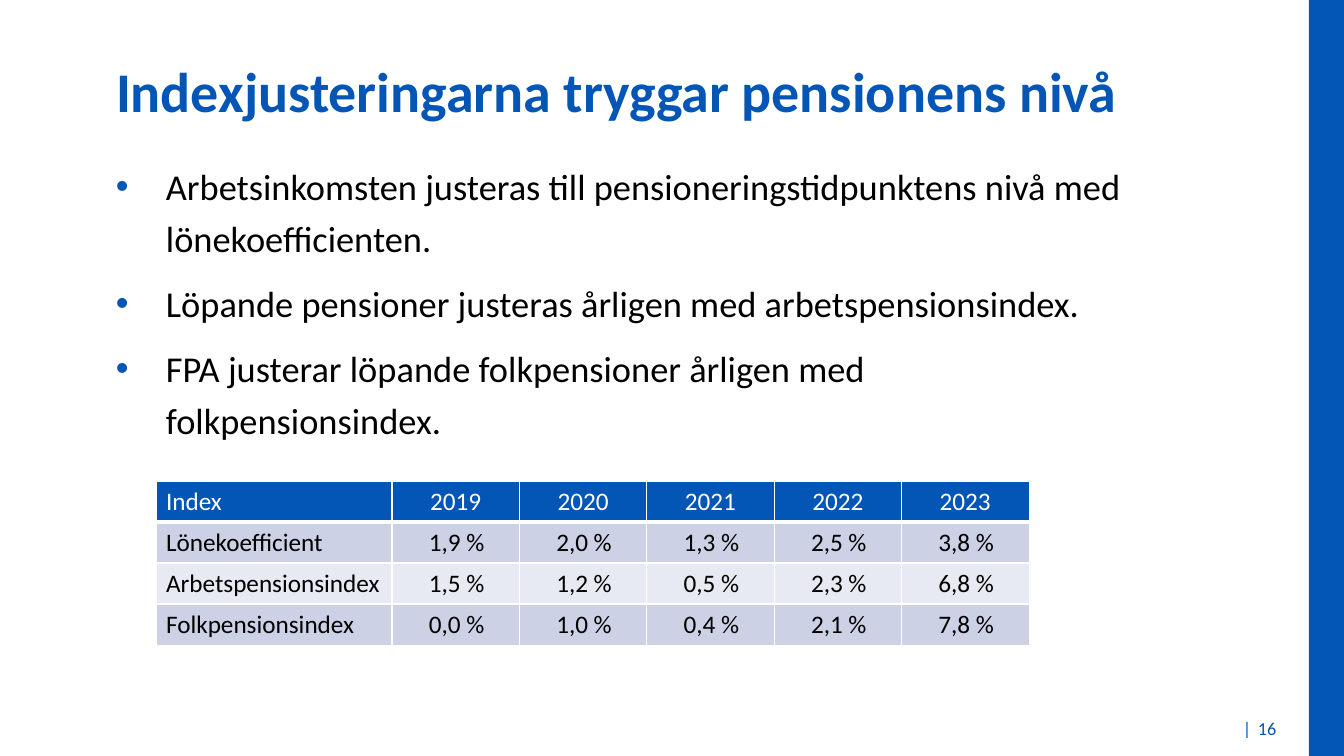
from lxml import etree
from pptx import Presentation
from pptx import util as u
from pptx.dml.color import RGBColor
from pptx.enum import shapes, text
from pptx.oxml.ns import qn

BLUE, WHITE, BLACK = "0356B5", "FFFFFF", "000000"
BANDS = ["CCD1E5", "E7E9F3"]
TITLE = "Indexjusteringarna tryggar pensionens nivå"
POINTS = [
    "Arbetsinkomsten justeras till pensioneringstidpunktens nivå med lönekoefficienten.",
    "Löpande pensioner justeras årligen med arbetspensionsindex.",
    "FPA justerar löpande folkpensioner årligen med folkpensionsindex.",
]
ROWS = [
    ("Index", "2019", "2020", "2021", "2022", "2023"),
    ("Lönekoefficient", "1,9 %", "2,0 %", "1,3 %", "2,5 %", "3,8 %"),
    ("Arbetspensionsindex", "1,5 %", "1,2 %", "0,5 %", "2,3 %", "6,8 %"),
    ("Folkpensionsindex", "0,0 %", "1,0 %", "0,4 %", "2,1 %", "7,8 %"),
]
TABLE = (156, 481, 873, 164)
FIRST = 236
LEFT, MID, RIGHT = text.PP_ALIGN.LEFT, text.PP_ALIGN.CENTER, text.PP_ALIGN.RIGHT
TOP, MIDDLE = text.MSO_ANCHOR.TOP, text.MSO_ANCHOR.MIDDLE


def px(n):
    return u.Emu(round(n * 914400 / 100.8))


def color(code):
    return RGBColor.from_string(code)


def bullet(para):
    props = para._p.get_or_add_pPr()
    props.set("marL", str(px(50)))
    props.set("indent", str(-px(50)))
    tint = etree.SubElement(props, qn("a:buClr"))
    etree.SubElement(tint, qn("a:srgbClr"), val=BLUE)
    etree.SubElement(props, qn("a:buFont"), typeface="Arial")
    etree.SubElement(props, qn("a:buChar"), char="•")


def write(frame, lines, size=18, ink=BLUE, bold=False, align=LEFT,
          dots=False, space=1.0, gap=0):
    for i, line in enumerate(lines):
        para = frame.add_paragraph() if i else frame.paragraphs[0]
        if dots:
            bullet(para)
        para.alignment = align
        para.line_spacing = space
        para.space_before = u.Pt(gap if i else 0)
        run = para.add_run()
        run.text = line
        font = run.font
        font.name, font.size, font.bold = "Calibri", u.Pt(size), bold
        font.color.rgb = color(ink)


def label(slide, box, lines, wrap=True, anchor=TOP, **style):
    frame = slide.shapes.add_textbox(*map(px, box)).text_frame
    frame.word_wrap, frame.vertical_anchor = wrap, anchor
    write(frame, lines, **style)


def border(cell, widths):
    """Draw white edges; widths maps L, R, T and B to points."""
    props = cell._tc.get_or_add_tcPr()
    for side, width in widths.items():
        edge = etree.SubElement(props, qn("a:ln" + side), w=str(u.Pt(width)))
        fill = etree.SubElement(edge, qn("a:solidFill"))
        etree.SubElement(fill, qn("a:srgbClr"), val=WHITE)


def add_grid(slide):
    high, wide = len(ROWS), len(ROWS[0])
    table = slide.shapes.add_table(high, wide, *map(px, TABLE)).table
    for c, col in enumerate(table.columns):
        col.width = px((TABLE[2] - FIRST) / (wide - 1) if c else FIRST)
    for r, row in enumerate(ROWS):
        table.rows[r].height = px(TABLE[3] / high)
        for c, value in enumerate(row):
            cell = table.cell(r, c)
            border(cell, {
                "L": 1 if c else 0.25,
                "R": 1 if c < wide - 1 else 0.25,
                "T": (0.25, 3, 1, 1)[r],
                "B": (3, 1, 1, 0.25)[r],
            })
            cell.fill.solid()
            cell.fill.fore_color.rgb = color(BANDS[(r - 1) % 2] if r else BLUE)
            cell.vertical_anchor = MIDDLE if r else TOP
            if r and c:
                cell.margin_right = px(35)
            align = LEFT if c == 0 else RIGHT if r else MID
            write(cell.text_frame, [value], ink=BLACK if r else WHITE, align=align)


def main():
    deck = Presentation()
    deck.slide_width, deck.slide_height = px(1344), px(756)
    slide = deck.slides.add_slide(deck.slide_layouts[5])

    bar = slide.shapes.add_shape(shapes.MSO_SHAPE.RECTANGLE,
                                 *map(px, (1309, 0, 35, 756)))
    bar.shadow.inherit = False
    bar.fill.solid()
    bar.fill.fore_color.rgb = color(BLUE)
    bar.line.fill.background()

    title = slide.shapes.title
    title.left, title.top, title.width, title.height = map(px, (106, 48, 1051, 85))
    title.text_frame.vertical_anchor = MIDDLE
    write(title.text_frame, [TITLE], size=40, bold=True)

    label(slide, (1233, 712, 29, 35), ["|"], wrap=False, size=13)
    label(slide, (1248, 711, 44, 35), ["16"], anchor=MIDDLE, size=13)
    label(slide, (106, 150, 1037, 297), POINTS, size=26, ink=BLACK,
          dots=True, space=1.2, gap=9)
    add_grid(slide)
    deck.save("out.pptx")


if __name__ == "__main__":
    main()
